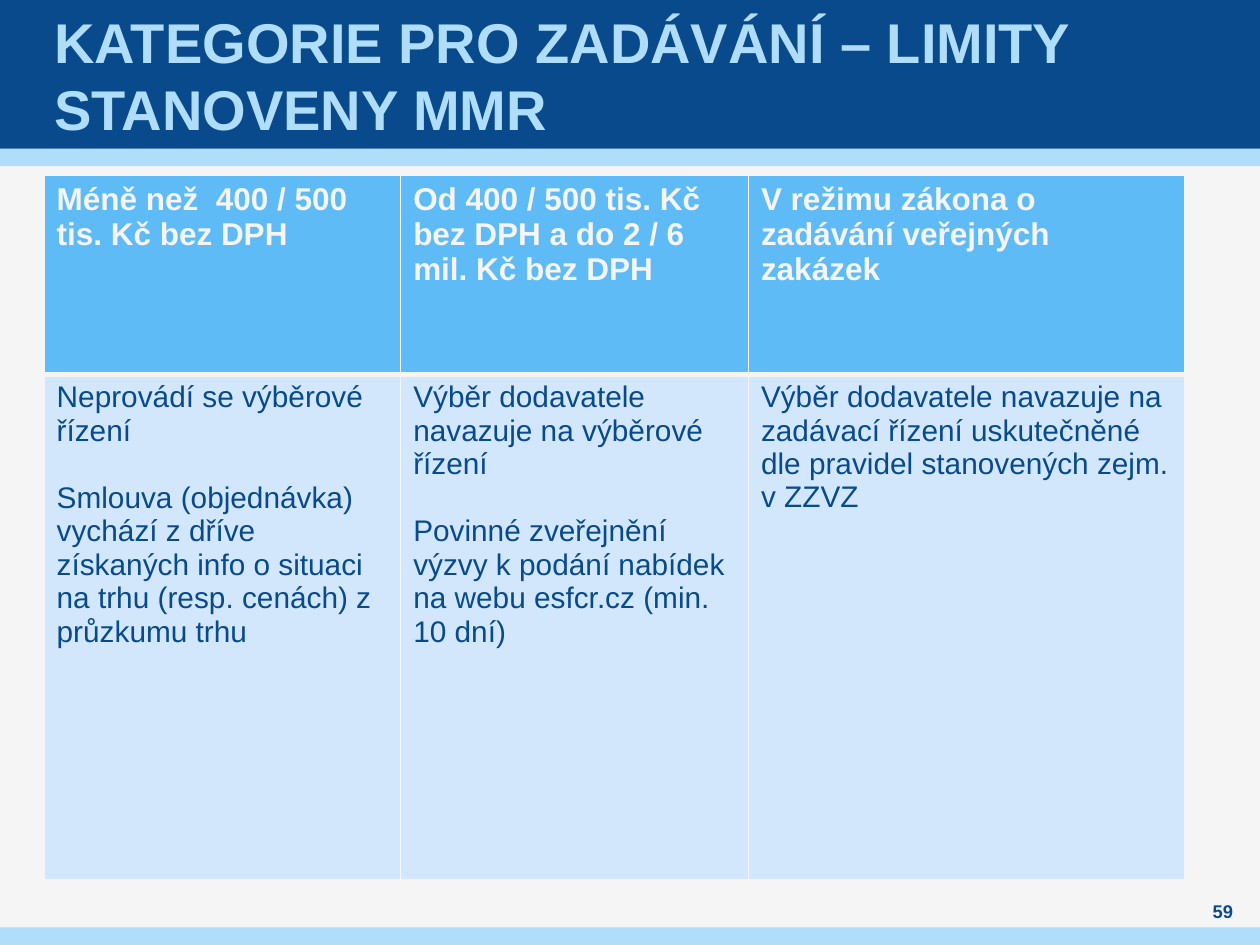
from lxml import etree
from pptx import Presentation
from pptx.dml.color import RGBColor
from pptx.enum import shapes, text
from pptx.oxml import ns
from pptx.util import Inches, Pt

NAVY = RGBColor(0x08, 0x4A, 0x8B)
SKY = RGBColor(0xAF, 0xDD, 0xFA)
BLUE = RGBColor(0x5F, 0xBB, 0xF5)
PALE = RGBColor(0xD2, 0xE7, 0xFB)
OFF_WHITE = RGBColor(0xF5, 0xF5, 0xF5)


class SlideBuilder:
    font = "Arial"

    def __init__(self, slide):
        self.slide = slide
        slide.background.fill.solid()
        slide.background.fill.fore_color.rgb = OFF_WHITE

    def band(self, top, height, color):
        band = self.slide.shapes.add_shape(
            shapes.MSO_SHAPE.RECTANGLE, 0, Inches(top), Inches(10), Inches(height))
        band.shadow.inherit = False
        band.fill.solid()
        band.fill.fore_color.rgb = color
        band.line.fill.background()

    def fill_text(self, frame, paragraphs, size, color, bold=False, gap=0):
        frame.word_wrap = True
        for i, words in enumerate(paragraphs):
            paragraph = frame.add_paragraph() if i else frame.paragraphs[0]
            paragraph.text = words
            paragraph.space_before = Pt(gap if i else 0)
            font = paragraph.font
            font.name, font.size, font.bold = self.font, Pt(size), bold
            font.color.rgb = color

    def label(self, box, words, size, color, side_inset=0, align=text.PP_ALIGN.LEFT):
        frame = self.slide.shapes.add_textbox(*map(Inches, box)).text_frame
        frame.margin_left = frame.margin_right = Inches(side_inset)
        frame.margin_top = frame.margin_bottom = 0
        frame.vertical_anchor = text.MSO_ANCHOR.MIDDLE
        self.fill_text(frame, [words], size, color, bold=True)
        frame.paragraphs[0].alignment = align

    def borders(self, cell, **widths):
        properties = cell._tc.get_or_add_tcPr()
        for i, (side, width) in enumerate(widths.items()):
            line = etree.Element(ns.qn(f"a:ln{side}"), w=str(Pt(width)))
            fill = etree.SubElement(line, ns.qn("a:solidFill"))
            etree.SubElement(fill, ns.qn("a:srgbClr"), val=str(OFF_WHITE))
            properties.insert(i, line)

    def table(self, left, top, widths, heights, rows):
        table = self.slide.shapes.add_table(
            len(rows), len(widths), Inches(left), Inches(top),
            Inches(sum(widths)), Inches(sum(heights))).table
        for column, width in zip(table.columns, widths):
            column.width = Inches(width)
        for r, height in enumerate(heights):
            table.rows[r].height = Inches(height)
            header = r == 0
            for c, paragraphs in enumerate(rows[r]):
                cell = table.cell(r, c)
                cell.fill.solid()
                cell.fill.fore_color.rgb = BLUE if header else PALE
                self.borders(cell, L=1, R=1, T=1 if header else 3, B=3 if header else 1)
                if header:
                    self.fill_text(cell.text_frame, paragraphs, 18, OFF_WHITE, bold=True)
                else:
                    self.fill_text(cell.text_frame, paragraphs, 17, NAVY, gap=19.5)


def main():
    deck = Presentation()
    deck.slide_width, deck.slide_height = Inches(10), Inches(7.5)
    page = SlideBuilder(deck.slides.add_slide(deck.slide_layouts[6]))

    # Header and footer bands
    page.band(1.18, 0.14, SKY)
    page.band(0, 1.18, NAVY)
    page.band(7.36, 0.14, SKY)

    # Title
    page.label((0.39, 0, 9.21, 1.18), "KATEGORIE PRO ZADÁVÁNÍ – LIMITY STANOVENY MMR",
               32, SKY, side_inset=0.04)

    # Procurement categories: limits above, procedures below
    limits = [
        ["Méně než  400 / 500 tis. Kč bez DPH"],
        ["Od 400 / 500 tis. Kč bez DPH a do 2 / 6 mil. Kč bez DPH"],
        ["V režimu zákona o zadávání veřejných zakázek"],
    ]
    procedures = [
        ["Neprovádí se výběrové řízení",
         "Smlouva (objednávka) vychází z dříve získaných info o situaci na trhu "
         "(resp. cenách) z průzkumu trhu"],
        ["Výběr dodavatele navazuje na výběrové řízení",
         "Povinné zveřejnění výzvy k podání nabídek na webu esfcr.cz (min. 10 dní)"],
        ["Výběr dodavatele navazuje na zadávací řízení uskutečněné dle pravidel "
         "stanovených zejm. v ZZVZ"],
    ]
    page.table(0.35, 1.39, (2.83, 2.76, 3.46), (1.58, 4.01), [limits, procedures])

    # Page number
    page.label((9.45, 7.13, 0.51, 0.2), "59", 10.5, NAVY, align=text.PP_ALIGN.CENTER)

    deck.save("out.pptx")


if __name__ == "__main__":
    main()
